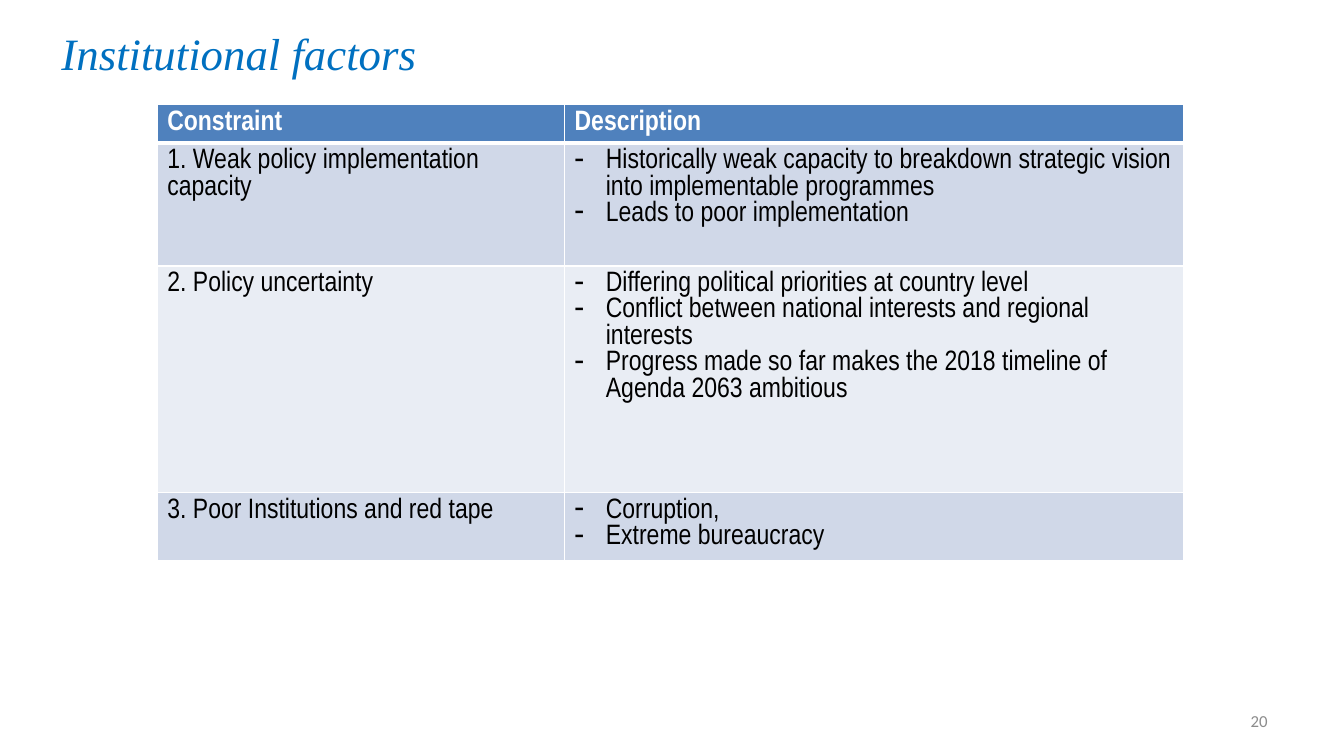
from pptx import Presentation
from pptx.dml.color import RGBColor
from pptx.enum.text import MSO_ANCHOR, PP_ALIGN
from pptx.oxml import parse_xml
from pptx.oxml.ns import nsdecls
from pptx.util import Inches, Pt

TITLE = "Institutional factors"
PAGE = "20"
HEADER = ("Constraint", "Description")
FACTORS = [
    ("1. Weak policy implementation capacity", [
        "Historically weak capacity to breakdown strategic vision into implementable programmes",
        "Leads to poor implementation"]),
    ("2. Policy uncertainty", [
        "Differing political priorities at country level",
        "Conflict between national interests and regional interests",
        "Progress made so far makes the 2018 timeline of Agenda 2063 ambitious"]),
    ("3. Poor Institutions and red tape", [
        "Corruption,",
        "Extreme bureaucracy"]),
]
COLS = (4.04, 6.14)
ROWS = (0.38, 1.22, 2.25, 0.67)
INDENT = Inches(0.31)

WHITE = RGBColor(0xFF, 0xFF, 0xFF)
BLACK = RGBColor(0, 0, 0)
GREY = RGBColor(0x8C, 0x8C, 0x8C)
TITLE_BLUE = RGBColor(0x00, 0x70, 0xC0)
HEAD_BLUE = RGBColor(0x4F, 0x81, 0xBD)
BANDS = (RGBColor(0xD0, 0xD8, 0xE8), RGBColor(0xE9, 0xED, 0xF4))


def set_font(p, name, size, color, bold=False, italic=False):
    f = p.font
    f.name, f.size, f.bold, f.italic = name, Pt(size), bold, italic
    f.color.rgb = color


def add_dash(p):
    pPr = p._p.get_or_add_pPr()
    pPr.set("marL", str(INDENT))
    pPr.set("indent", str(-INDENT))
    pPr.insert(0, parse_xml(f'<a:buChar {nsdecls("a")} char="-"/>'))


def set_borders(cell, top, bottom):
    tcPr = cell._tc.get_or_add_tcPr()
    sides = (("L", 1), ("R", 1), ("T", top), ("B", bottom))
    for i, (side, width) in enumerate(sides):
        tcPr.insert(i, parse_xml(
            f'<a:ln{side} {nsdecls("a")} w="{Pt(width)}"><a:solidFill>'
            f'<a:srgbClr val="{WHITE}"/></a:solidFill></a:ln{side}>'))


def fill_cell(cell, lines, row, bulleted):
    head = row == 0
    cell.fill.solid()
    cell.fill.fore_color.rgb = HEAD_BLUE if head else BANDS[(row - 1) % 2]
    set_borders(cell, 3 if row == 1 else 1, 3 if head else 1)
    cell.text_frame.text = "\n".join(lines)
    for p in cell.text_frame.paragraphs:
        set_font(p, "Arial Narrow", 20, WHITE if head else BLACK, bold=head)
        if bulleted:
            add_dash(p)


def main():
    prs = Presentation()
    prs.slide_width, prs.slide_height = Inches(13.33), Inches(7.5)
    s = prs.slides.add_slide(prs.slide_layouts[5])

    title = s.shapes.title
    title.left, title.top = Inches(0.51), Inches(0.25)
    title.width, title.height = Inches(9), Inches(0.55)
    tf = title.text_frame
    tf.text = TITLE
    tf.vertical_anchor = MSO_ANCHOR.MIDDLE
    p = tf.paragraphs[0]
    p.alignment = PP_ALIGN.LEFT
    set_font(p, "Times New Roman", 32, TITLE_BLUE, italic=True)

    table = s.shapes.add_table(
        len(ROWS), len(COLS), Inches(1.56), Inches(1.04),
        Inches(sum(COLS)), Inches(sum(ROWS))).table
    for col, width in zip(table.columns, COLS):
        col.width = Inches(width)
    for row, height in zip(table.rows, ROWS):
        row.height = Inches(height)
    for c, label in enumerate(HEADER):
        fill_cell(table.cell(0, c), [label], 0, False)
    for r, (constraint, points) in enumerate(FACTORS, 1):
        fill_cell(table.cell(r, 0), [constraint], r, False)
        fill_cell(table.cell(r, 1), points, r, True)

    tf = s.shapes.add_textbox(
        Inches(9.56), Inches(6.95), Inches(3.11), Inches(0.4)).text_frame
    tf.word_wrap = True
    tf.vertical_anchor = MSO_ANCHOR.MIDDLE
    tf.text = PAGE
    p = tf.paragraphs[0]
    p.alignment = PP_ALIGN.RIGHT
    set_font(p, "Calibri", 12, GREY)

    prs.save("out.pptx")


if __name__ == "__main__":
    main()
